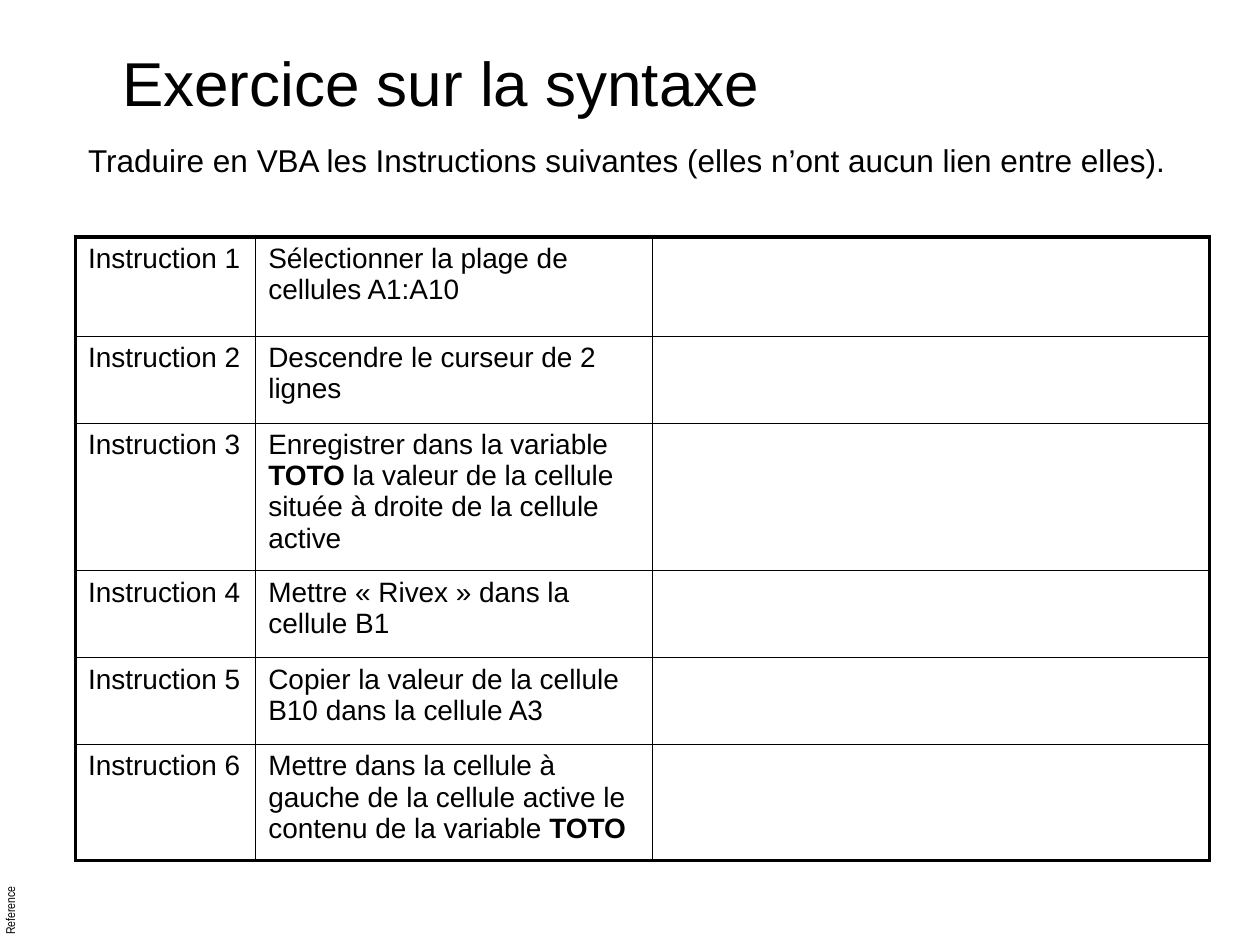
from lxml.etree import SubElement
from pptx import Presentation
from pptx.dml.color import RGBColor
from pptx.enum.text import MSO_ANCHOR, PP_ALIGN
from pptx.oxml.ns import qn
from pptx.util import Inches, Pt

BLACK = "000000"
THICK, THIN = 2.25, 0.5
HEADING = "Traduire en VBA les Instructions suivantes (elles n’ont aucun lien entre elles)."
# Each instruction is a list of pieces; every second piece is bold.
INSTRUCTIONS = [
    ["Sélectionner la plage de cellules A1:A10"],
    ["Descendre le curseur de 2 lignes"],
    ["Enregistrer dans la variable ", "TOTO ",
     "la valeur de la cellule située à droite de la cellule active"],
    ["Mettre « Rivex » dans la cellule B1"],
    ["Copier la valeur de la cellule B10 dans la cellule A3"],
    ["Mettre dans la cellule à gauche de la cellule active le contenu de la variable ",
     "TOTO"],
]
COL_WIDTHS = [1.43, 3.15, 4.42]
ROW_HEIGHTS = [0.79, 0.79, 0.69, 1.17, 0.69, 0.69, 0.92]


def color(hex_code):
    return RGBColor.from_string(hex_code)


def add_text(p, text, size=16, font="Arial", bold=False, fill=BLACK):
    r = p.add_run()
    r.text = text
    r.font.size = Pt(size)
    r.font.name = font
    r.font.bold = bold
    r.font.color.rgb = color(fill)


def set_margins(tf, value=0):
    tf.margin_left = tf.margin_right = tf.margin_top = tf.margin_bottom = Inches(value)


def set_borders(cell, widths):
    """Draw left, right, top and bottom lines; a width of 0 hides the line."""
    tc_pr = cell._tc.get_or_add_tcPr()
    for i, (side, width) in enumerate(zip(("lnL", "lnR", "lnT", "lnB"), widths)):
        ln = SubElement(tc_pr, qn(f"a:{side}"), w=str(Pt(width)))
        tc_pr.insert(i, ln)
        if width:
            solid = SubElement(ln, qn("a:solidFill"))
            SubElement(solid, qn("a:srgbClr"), val=BLACK)
        else:
            SubElement(ln, qn("a:noFill"))


def add_title(s, left, top, width, height):
    title = s.shapes.title
    title.left, title.top = Inches(left), Inches(top)
    title.width, title.height = Inches(width), Inches(height)
    tf = title.text_frame
    set_margins(tf)
    tf.vertical_anchor = MSO_ANCHOR.MIDDLE
    p = tf.paragraphs[0]
    p.alignment = PP_ALIGN.LEFT
    p.line_spacing = Pt(33.3)
    add_text(p, "Exercice sur la syntaxe", size=35.4)


def add_side_label(s, left, top, width, height):
    box = s.shapes.add_textbox(Inches(left), Inches(top), Inches(width), Inches(height))
    tf = box.text_frame
    set_margins(tf)
    tf.word_wrap = False
    tf.vertical_anchor = MSO_ANCHOR.MIDDLE
    tf._txBody.bodyPr.set("vert", "vert270")
    add_text(tf.paragraphs[0], "Reference", size=7.3, font="Arial Narrow")


def add_exercise_table(s, left, top):
    n_rows, n_cols = len(ROW_HEIGHTS), len(COL_WIDTHS)
    table = s.shapes.add_table(n_rows, n_cols, Inches(left), Inches(top),
                               Inches(sum(COL_WIDTHS)), Inches(sum(ROW_HEIGHTS))).table
    table.first_row = table.horz_banding = False
    for col, width in zip(table.columns, COL_WIDTHS):
        col.width = Inches(width)
    for row, height in zip(table.rows, ROW_HEIGHTS):
        row.height = Inches(height)

    for i in range(n_rows):
        for j in range(n_cols):
            cell = table.cell(i, j)
            cell.fill.background()
            set_borders(cell, (0, 0, 0, THICK) if i == 0 else (
                THICK if j == 0 else THIN,
                THICK if j == n_cols - 1 else THIN,
                THICK if i == 1 else THIN,
                THICK if i == n_rows - 1 else THIN))

    heading = table.cell(0, 0)
    heading.merge(table.cell(0, n_cols - 1))
    add_text(heading.text_frame.paragraphs[0], HEADING, size=18)
    for i, pieces in enumerate(INSTRUCTIONS, start=1):
        add_text(table.cell(i, 0).text_frame.paragraphs[0], f"Instruction {i}")
        p = table.cell(i, 1).text_frame.paragraphs[0]
        for k, piece in enumerate(pieces):
            add_text(p, piece, bold=k % 2 == 1)


def main():
    prs = Presentation()
    prs.slide_width, prs.slide_height = Inches(10), Inches(7.5)
    s = prs.slides.add_slide(prs.slide_layouts[5])
    add_side_label(s, 0, 7.02, 0.16, 0.4)
    add_title(s, 0.97, 0.33, 8.26, 0.77)
    add_exercise_table(s, 0.6, 1.09)
    prs.save("out.pptx")


if __name__ == "__main__":
    main()
